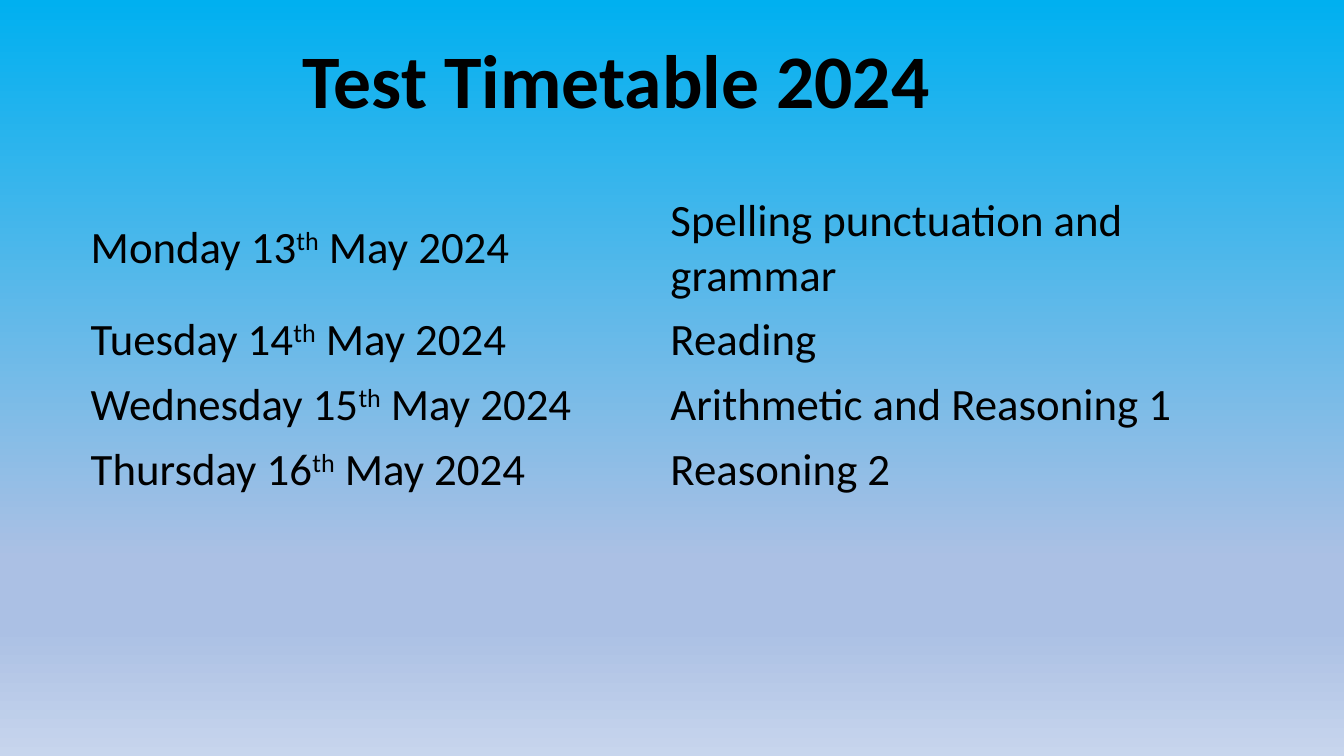
"""Build the test timetable slide."""
from typing import NamedTuple

from lxml import etree
from pptx import Presentation
from pptx.dml.color import RGBColor
from pptx.enum import text
from pptx.oxml import ns
from pptx.slide import Slide
from pptx.table import _Cell
from pptx.util import Inches, Pt

FONT = "Calibri"
BLACK = RGBColor(0x00, 0x00, 0x00)
SKY = RGBColor(0x00, 0xB0, 0xF0)
LAVENDER = RGBColor(0xAB, 0xC0, 0xE4)
PALE = RGBColor(0xC7, 0xD5, 0xED)
NO_STYLE_NO_GRID = "{2D5ABB26-0587-4C30-8999-92F81FD0307C}"


class Stop(NamedTuple):
    percent: int
    color: RGBColor


class Test(NamedTuple):
    weekday: str
    day: int
    subject: str
    height: float = 0.63


STOPS = [Stop(0, SKY), Stop(74, LAVENDER), Stop(83, LAVENDER), Stop(100, PALE)]
TESTS = [
    Test("Monday", 13, "Spelling punctuation and grammar", 1.17),
    Test("Tuesday", 14, "Reading"),
    Test("Wednesday", 15, "Arithmetic and Reasoning 1"),
    Test("Thursday", 16, "Reasoning 2"),
]


def paint_background(page: Slide, stops: list[Stop]) -> None:
    fill = page.background.fill
    fill.gradient()
    fill.gradient_angle = 270
    stop_list = page.background.element.find(".//" + ns.qn("a:gsLst"))
    stop_list.clear()
    for stop in stops:
        mark = etree.SubElement(stop_list, ns.qn("a:gs"), pos=str(stop.percent * 1000))
        etree.SubElement(mark, ns.qn("a:srgbClr"), val=str(stop.color))


def add_title(page: Slide, wording: str) -> None:
    title = page.shapes.title
    title.left, title.top = Inches(1.2), Inches(0.65)
    title.width, title.height = Inches(10), Inches(0.64)
    frame = title.text_frame
    frame.text = wording
    frame.auto_size = text.MSO_AUTO_SIZE.NONE
    frame.vertical_anchor = text.MSO_ANCHOR.BOTTOM
    para = frame.paragraphs[0]
    para.alignment = text.PP_ALIGN.CENTER
    para.line_spacing = 0.9
    para.font.name, para.font.size, para.font.bold = FONT, Pt(54), True
    para.font.color.rgb = BLACK


def fill_cell(cell: _Cell, *parts: str) -> None:
    cell.fill.background()
    cell.vertical_anchor = text.MSO_ANCHOR.MIDDLE
    para = cell.text_frame.paragraphs[0]
    para.font.name, para.font.size = FONT, Pt(32)
    para.font.color.rgb = BLACK
    for part in parts:
        span = para.add_run()
        span.text = part
        if part == "th":
            span.font._element.set("baseline", "30000")


def add_timetable(page: Slide, tests: list[Test]) -> None:
    frame = page.shapes.add_table(
        len(tests), 2, Inches(0.8), Inches(1.87), Inches(11.5),
        Inches(sum(test.height for test in tests)),
    )
    table = frame.table
    table.first_row = table.horz_banding = False
    table._tbl.tblPr.find(ns.qn("a:tableStyleId")).text = NO_STYLE_NO_GRID
    for row, test in zip(table.rows, tests):
        row.height = Inches(test.height)
        date, subject = row.cells
        fill_cell(date, f"{test.weekday} {test.day}", "th", " May 2024")
        fill_cell(subject, test.subject)


def main() -> None:
    deck = Presentation()
    deck.slide_width, deck.slide_height = Inches(13.33), Inches(7.5)
    page = deck.slides.add_slide(deck.slide_layouts.get_by_name("Title Only"))
    paint_background(page, STOPS)
    add_title(page, "Test Timetable 2024 ")
    add_timetable(page, TESTS)
    deck.save("out.pptx")


if __name__ == "__main__":
    main()
